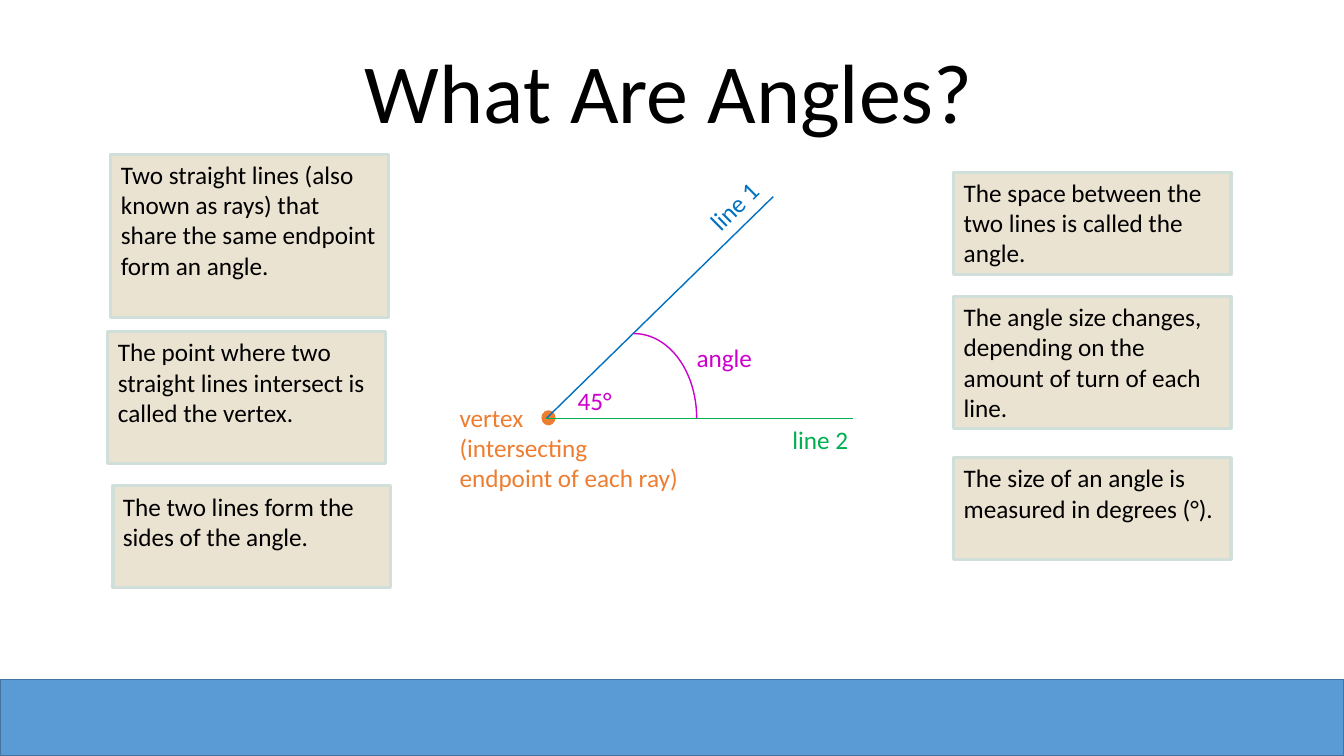
from lxml import etree
from pptx import Presentation
from pptx.dml.color import RGBColor
from pptx.enum.shapes import MSO_CONNECTOR, MSO_SHAPE
from pptx.enum.text import MSO_ANCHOR, PP_ALIGN
from pptx.oxml.ns import qn
from pptx.util import Inches, Pt

BLACK = RGBColor(0x00, 0x00, 0x00)
BAND_BLUE = RGBColor(0x5B, 0x9B, 0xD5)
BAND_EDGE = RGBColor(0x43, 0x73, 0x9E)
NOTE_FILL = RGBColor(0xEB, 0xE3, 0xD2)
NOTE_EDGE = RGBColor(0xD1, 0xDF, 0xDA)
ORANGE = RGBColor(0xED, 0x7D, 0x31)
BLUE = RGBColor(0x00, 0x70, 0xC0)
GREEN = RGBColor(0x00, 0xB0, 0x50)
MAGENTA = RGBColor(0xCC, 0x00, 0xCC)

LEFT_NOTES = [
    (0.03, 0, 1.62, "Two straight lines (also known as rays) that share the same endpoint form an angle."),
    (0, 1.76, 1.31, "The point where two straight lines intersect is called the vertex."),
    (0.05, 3.29, 1.01, "The two lines form the sides of the angle."),
]
RIGHT_NOTES = [
    (0, 0, 1.01, "The space between the two lines is called the angle."),
    (0, 1.23, 1.31, "The angle size changes, depending on the amount of turn of each line."),
    (0, 2.83, 1.01, "The size of an angle is measured in degrees (°)."),
]


def write_text(shape, lines, size, color, align=PP_ALIGN.LEFT, anchor=MSO_ANCHOR.TOP):
    """Fill a shape with one paragraph per line and return its text frame."""
    frame = shape.text_frame
    frame.word_wrap = True
    frame.vertical_anchor = anchor
    for index, line in enumerate(lines):
        paragraph = frame.add_paragraph() if index else frame.paragraphs[0]
        paragraph.alignment = align
        run = paragraph.add_run()
        run.text = line
        run.font.name = "Calibri"
        run.font.size = Pt(size)
        run.font.color.rgb = color
    return frame


def add_figure(slide, kind, left, top, width, height, fill=None, edge=None, edge_width=1):
    """Add a flat preset shape with an optional fill and outline."""
    shape = slide.shapes.add_shape(kind, Inches(left), Inches(top), Inches(width), Inches(height))
    shape.shadow.inherit = False
    if fill is None:
        shape.fill.background()
    else:
        shape.fill.solid()
        shape.fill.fore_color.rgb = fill
    if edge is None:
        shape.line.fill.background()
    else:
        shape.line.color.rgb = edge
        shape.line.width = Pt(edge_width)
    return shape


def add_ray(slide, start, end, color):
    """Draw a thin straight line without a shadow."""
    ray = slide.shapes.add_connector(MSO_CONNECTOR.STRAIGHT, *map(Inches, start + end))
    ray.line.color.rgb = color
    ray.line.width = Pt(1)
    etree.SubElement(ray._element.spPr, qn("a:effectLst"))


def add_label(slide, left, top, lines, color, width=1.39, height=0.4, rotation=0):
    """Place a diagram label."""
    label = slide.shapes.add_textbox(Inches(left), Inches(top), Inches(width), Inches(height))
    label.rotation = rotation
    write_text(label, lines, 18, color)


def add_title(slide, left, top, width, height):
    """Place the centred slide title."""
    title = slide.shapes.add_textbox(Inches(left), Inches(top), Inches(width), Inches(height))
    frame = write_text(title, ["What Are Angles?"], 60, BLACK, PP_ALIGN.CENTER, MSO_ANCHOR.BOTTOM)
    frame.paragraphs[0].line_spacing = 0.9


def add_notes_column(slide, left, top, width, notes):
    """Place a column of beige explanation boxes."""
    for shift, drop, height, text in notes:
        note = add_figure(slide, MSO_SHAPE.RECTANGLE, left + shift, top + drop, width, height,
                          NOTE_FILL, NOTE_EDGE, 2.25)
        write_text(note, [text], 18, BLACK)


def add_angle_diagram(slide, left, top):
    """Draw the labelled angle from the top left corner of its box."""
    vertex = (left + 0.96, top + 2.53)
    add_figure(slide, MSO_SHAPE.OVAL, left + 0.91, top + 2.45, 0.14, 0.15, ORANGE)
    add_ray(slide, vertex, (left + 3.21, top + 0.33), BLUE)
    add_ray(slide, vertex, (left + 4, top + 2.53), GREEN)
    add_label(slide, left + 2.35, top, ["line 1"], BLUE, rotation=315.4)
    add_label(slide, left + 3.3, top + 2.54, ["line 2"], GREEN)
    add_label(slide, left, top + 2.32, ["vertex", "(intersecting", "endpoint of each ray)"],
              ORANGE, 2.47, 1.31)
    add_figure(slide, MSO_SHAPE.ARC, left + 1.21, top + 1.69, 1.24, 1.67, edge=MAGENTA)
    add_label(slide, left + 2.35, top + 1.73, ["angle"], MAGENTA)
    add_label(slide, left + 1.17, top + 2.15, ["45°"], MAGENTA)


def main():
    """Build and save the slide."""
    presentation = Presentation()
    presentation.slide_width = Inches(13.33)
    presentation.slide_height = Inches(7.5)
    slide = presentation.slides.add_slide(presentation.slide_layouts[6])
    add_figure(slide, MSO_SHAPE.RECTANGLE, 0, 6.74, 13.33, 0.76, BAND_BLUE, BAND_EDGE)
    add_title(slide, 0.7, 0, 11.87, 1.45)
    add_notes_column(slide, 1.07, 1.53, 2.75, LEFT_NOTES)
    add_notes_column(slide, 9.46, 1.71, 2.75, RIGHT_NOTES)
    add_angle_diagram(slide, 4.46, 1.62)
    presentation.save("out.pptx")


if __name__ == "__main__":
    main()
